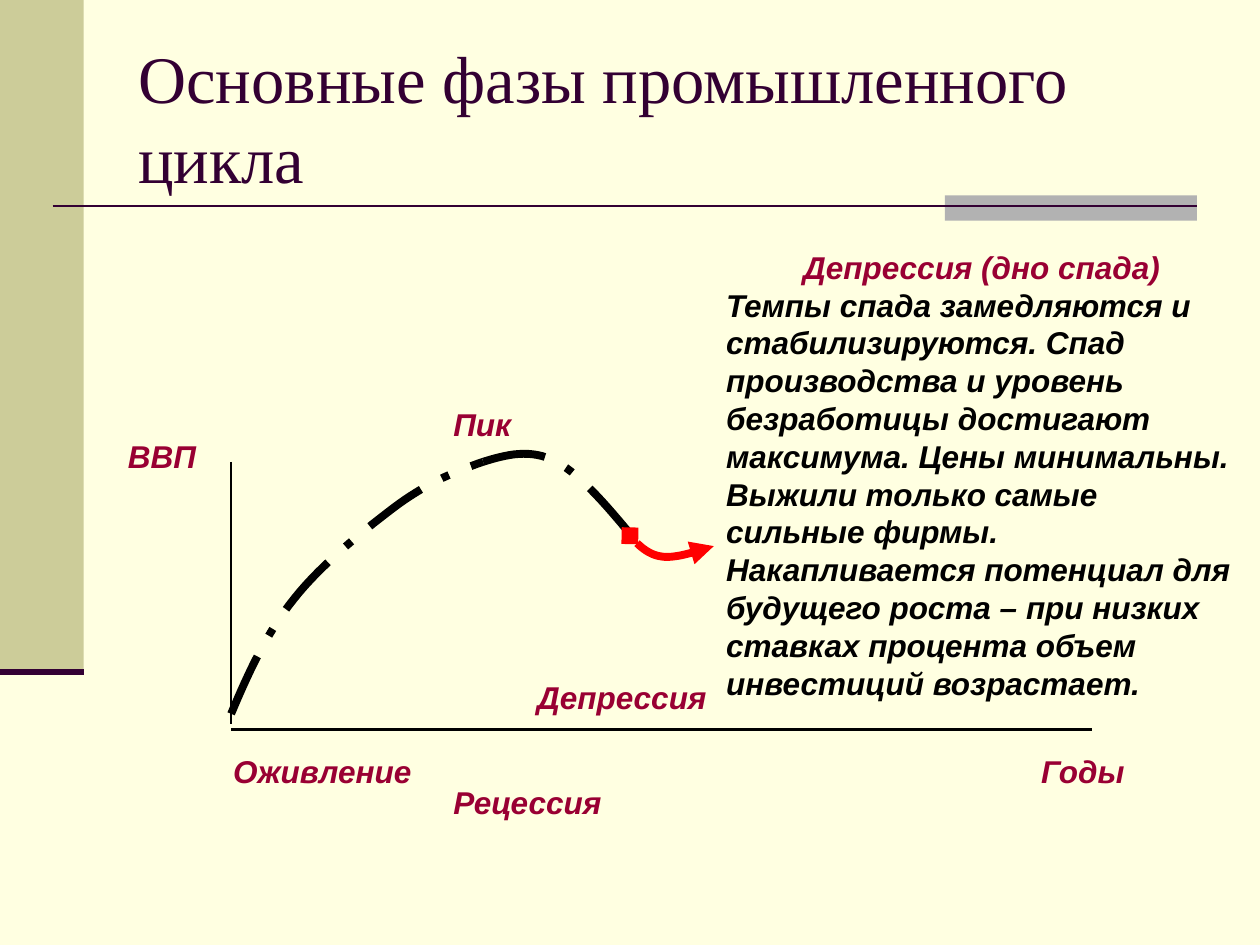
"""Build a slide on the phases of the industrial cycle, with a GDP curve."""
from lxml.etree import SubElement
from pptx import Presentation
from pptx.dml.color import RGBColor
from pptx.enum.dml import MSO_LINE
from pptx.enum.shapes import MSO_CONNECTOR, MSO_SHAPE
from pptx.enum.text import MSO_ANCHOR, MSO_AUTO_SIZE, PP_ALIGN
from pptx.oxml.ns import qn
from pptx.util import Cm, Pt

CREAM = RGBColor(0xFF, 0xFF, 0xE1)
OLIVE = RGBColor(0xCC, 0xCC, 0x99)
GRAY = RGBColor(0xB2, 0xB2, 0xB2)
PLUM = RGBColor(0x33, 0x00, 0x33)
CRIMSON = RGBColor(0x99, 0x00, 0x33)
BLACK = RGBColor(0x00, 0x00, 0x00)
RED = RGBColor(0xFF, 0x00, 0x00)

TITLE_FONT = {"name": "Times New Roman", "size": Pt(38)}
BODY_FONT = {"name": "Arial", "size": Pt(18), "bold": True, "italic": True}
LABEL_HEIGHT = 1.03
CURVE_STEPS = 16

BODY_TEXT = (
    "Темпы спада замедляются и стабилизируются. Спад производства и уровень "
    "безработицы достигают максимума. Цены минимальны. Выжили только самые "
    "сильные фирмы. Накапливается потенциал для будущего роста – при низких "
    "ставках процента объем инвестиций возрастает."
)
FRAMED_LABELS = [
    ("Годы", 20.74, 15.03, 3.6),
    ("ВВП", 2.33, 8.68, 2.12),
    ("Оживление", 4.45, 15.03, 4.23),
    ("Пик", 8.89, 8.04, 2.33),
]
PLAIN_LABELS = [
    ("Рецессия", 8.89, 15.66, 4.23),
    ("Депрессия", 10.58, 13.55, 4.87),
]
RISE = [
    (4.66, 14.39), (5, 13.59), (5.36, 12.78), (5.93, 12.07), (6.5, 11.35),
    (7.41, 10.63), (8.04, 10.16), (8.68, 9.7), (9.2, 9.5), (9.74, 9.31),
]
FALL = [
    (9.74, 9.31), (10.2, 9.17), (10.69, 9.03), (11.22, 9.31),
    (11.74, 9.59), (12.32, 10.3), (12.91, 11.01),
]
BOTTOM = [
    (12.7, 10.8), (12.88, 11), (13.06, 11.18), (13.34, 11.22),
    (13.61, 11.26), (14, 11.13), (14.39, 11.01),
]


def add_rectangle(slide, box, fill=None, line=None):
    """Add a rectangle without shadow; an absent fill or line stays empty."""
    shape = slide.shapes.add_shape(MSO_SHAPE.RECTANGLE, *map(Cm, box))
    shape.shadow.inherit = False
    for target, color in ((shape.fill, fill), (shape.line.fill, line)):
        if color is None:
            target.background()
        else:
            target.solid()
            target.fore_color.rgb = color
    return shape


def add_line(slide, start, end, color, width):
    """Add a straight line without shadow."""
    line = slide.shapes.add_connector(
        MSO_CONNECTOR.STRAIGHT, *map(Cm, start + end))
    line.line.color.rgb = color
    line.line.width = Pt(width)
    SubElement(line._element.spPr, qn("a:effectLst"))


def write_text(shape, paragraphs, font_format, anchor=MSO_ANCHOR.TOP):
    """Fill a shape with paragraphs of (text, colour, alignment)."""
    frame = shape.text_frame
    frame.word_wrap = True
    frame.vertical_anchor = anchor
    frame.auto_size = MSO_AUTO_SIZE.NONE
    for index, (text, color, alignment) in enumerate(paragraphs):
        paragraph = frame.add_paragraph() if index else frame.paragraphs[0]
        paragraph.alignment = alignment
        run = paragraph.add_run()
        run.text = text
        for name, value in font_format.items():
            setattr(run.font, name, value)
        run.font.color.rgb = color


def add_text(slide, box, *text_format):
    """Add a text box with formatted paragraphs."""
    write_text(slide.shapes.add_textbox(*map(Cm, box)), *text_format)


def add_label(slide, text, left, top, width, framed):
    """Add a crimson diagram label, in a background-coloured frame if framed."""
    box = (left, top, width, LABEL_HEIGHT)
    paragraphs = [(text, CRIMSON, PP_ALIGN.LEFT)]
    if framed:
        write_text(add_rectangle(slide, box, line=CREAM), paragraphs, BODY_FONT)
    else:
        add_text(slide, box, paragraphs, BODY_FONT)


def bezier_points(controls):
    """Return points along a chain of cubic Bezier segments."""
    points = [controls[0]]
    for first in range(0, len(controls) - 1, 3):
        segment = controls[first:first + 4]
        for step in range(1, CURVE_STEPS + 1):
            t = step / CURVE_STEPS
            weights = ((1 - t) ** 3, 3 * t * (1 - t) ** 2,
                       3 * t ** 2 * (1 - t), t ** 3)
            points.append(tuple(
                sum(weight * value for weight, value in zip(weights, axis))
                for axis in zip(*segment)))
    return points


def add_curve(slide, controls, color, dash=None, ends=None):
    """Add an open curve with an optional dash style and line ends."""
    start, *rest = [(Cm(x), Cm(y)) for x, y in bezier_points(controls)]
    builder = slide.shapes.build_freeform(*start)
    builder.add_line_segments(rest, close=False)
    curve = builder.convert_to_shape()
    curve.shadow.inherit = False
    curve.fill.background()
    curve.line.color.rgb = color
    curve.line.width = Pt(4.5)
    if dash is not None:
        curve.line.dash_style = dash
    for tag, kind in (ends or {}).items():
        SubElement(curve.line._get_or_add_ln(), qn(tag), type=kind)


def add_frame(slide):
    """Add the background, side bar and rules."""
    slide.background.fill.solid()
    slide.background.fill.fore_color.rgb = CREAM
    add_rectangle(slide, (0, 0, 1.69, 13.55), fill=OLIVE)
    add_rectangle(slide, (19.05, 3.94, 5.08, 0.51), fill=GRAY)
    add_line(slide, (1.06, 4.15), (24.13, 4.15), PLUM, 1.5)
    add_line(slide, (0, 13.55), (1.69, 13.55), PLUM, 3.5)


def add_diagram(slide):
    """Add the axes, labels and phase curves."""
    add_line(slide, (4.66, 9.31), (4.66, 14.6), BLACK, 1.5)
    add_line(slide, (4.66, 14.71), (22.01, 14.71), BLACK, 1.5)
    for label in FRAMED_LABELS:
        add_label(slide, *label, framed=True)
    for controls in (RISE, FALL):
        add_curve(slide, controls, BLACK, dash=MSO_LINE.LONG_DASH_DOT)
    add_curve(slide, BOTTOM, RED,
              ends={"a:headEnd": "diamond", "a:tailEnd": "triangle"})
    for label in PLAIN_LABELS:
        add_label(slide, *label, framed=False)


def main():
    """Build and save the presentation."""
    presentation = Presentation()
    presentation.slide_width = Cm(25.4)
    presentation.slide_height = Cm(19.05)
    slide = presentation.slides.add_slide(presentation.slide_layouts[6])
    add_frame(slide)
    add_text(slide, (2.54, 0.76, 21.59, 3.18),
             [("Основные фазы промышленного цикла", PLUM, PP_ALIGN.LEFT)],
             TITLE_FONT, MSO_ANCHOR.MIDDLE)
    add_text(slide, (14.39, 4.87, 10.8, 9.4),
             [("Депрессия (дно спада)", CRIMSON, PP_ALIGN.CENTER),
              (BODY_TEXT, BLACK, PP_ALIGN.LEFT)], BODY_FONT)
    add_diagram(slide)
    presentation.save("out.pptx")


if __name__ == "__main__":
    main()
